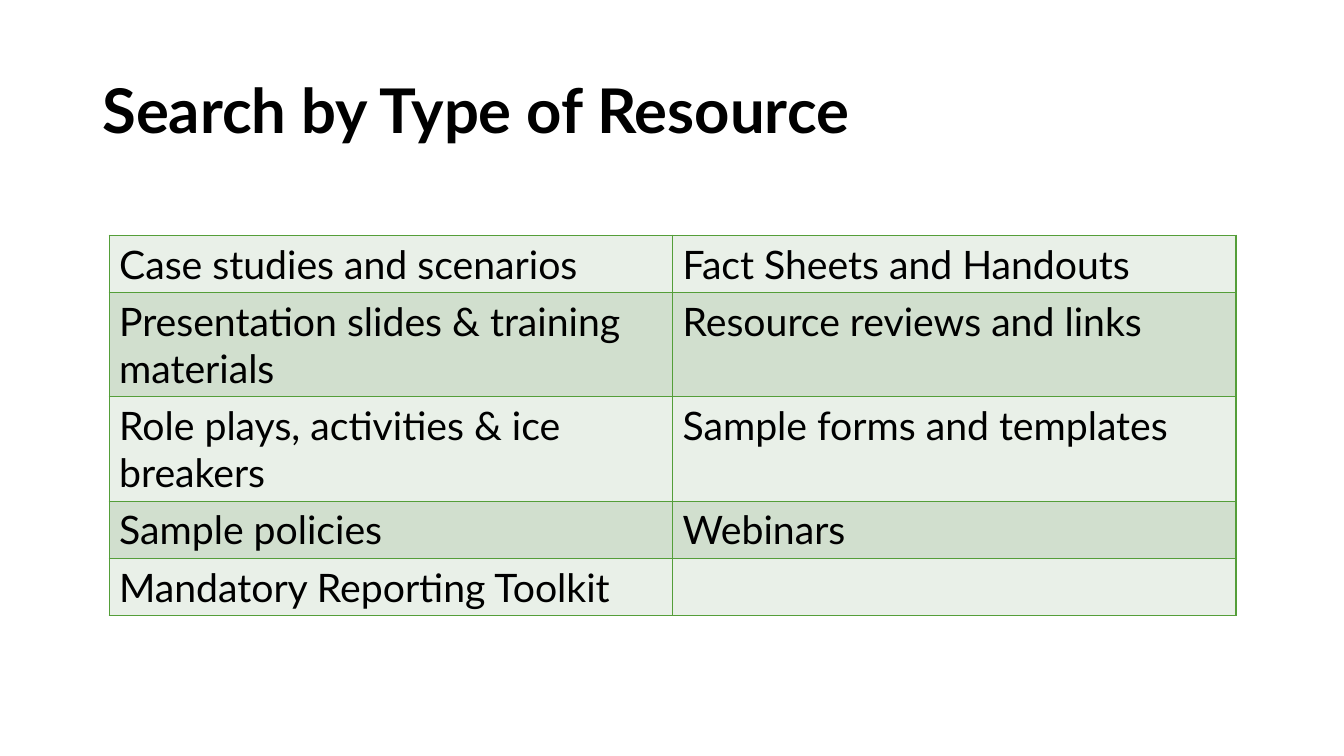
from lxml import etree
from pptx import Presentation
from pptx.dml.color import RGBColor
from pptx.enum.text import MSO_ANCHOR
from pptx.oxml.ns import qn
from pptx.util import Cm, Pt

MIDDLE = MSO_ANCHOR.MIDDLE
FONT = "Lato"
BLACK = "000000"
BORDER = "549E39"
BANDS = ["E9F0E8", "D1DFCE"]
SINGLE_LINE, DOUBLE_LINE = 1.44, 2.63  # row heights in cm

RESOURCES = [
    (SINGLE_LINE, "Case studies and scenarios", "Fact Sheets and Handouts"),
    (DOUBLE_LINE, "Presentation slides & training materials", "Resource reviews and links"),
    (DOUBLE_LINE, "Role plays, activities & ice breakers", "Sample forms and templates"),
    (SINGLE_LINE, "Sample policies", "Webinars"),
    (SINGLE_LINE, "Mandatory Reporting Toolkit", ""),
]


def color(hex_string):
    return RGBColor.from_string(hex_string)


def style_text(paragraph, size, bold=False):
    font = paragraph.font
    font.name = FONT
    font.size = Pt(size)
    font.bold = bold
    font.color.rgb = color(BLACK)


prs = Presentation()
prs.slide_width, prs.slide_height = Cm(33.87), Cm(19.05)
slide = prs.slides.add_slide(prs.slide_layouts[6])

heading = slide.shapes.add_textbox(Cm(2.33), Cm(1.01), Cm(29.21), Cm(3.68)).text_frame
heading.word_wrap = True
heading.vertical_anchor = MIDDLE
heading.text = "Search by Type of Resource"
heading.paragraphs[0].line_spacing = 0.9
style_text(heading.paragraphs[0], 44, bold=True)

table_height = sum(height for height, *_ in RESOURCES)
table = slide.shapes.add_table(
    len(RESOURCES), 2, Cm(2.75), Cm(5.93), Cm(28.4), Cm(table_height)
).table
table.first_row = False

for row_index, (height, *entries) in enumerate(RESOURCES):
    table.rows[row_index].height = Cm(height)
    for column_index, entry in enumerate(entries):
        cell = table.cell(row_index, column_index)
        cell.text = entry
        style_text(cell.text_frame.paragraphs[0], 28)
        cell.fill.solid()
        cell.fill.fore_color.rgb = color(BANDS[row_index % 2])
        # Borders must come before the fill in the cell properties
        cell_properties = cell._tc.get_or_add_tcPr()
        for position, side in enumerate(["a:lnL", "a:lnR", "a:lnT", "a:lnB"]):
            line = etree.Element(qn(side), w=str(Pt(1)))
            line_fill = etree.SubElement(line, qn("a:solidFill"))
            etree.SubElement(line_fill, qn("a:srgbClr"), val=BORDER)
            cell_properties.insert(position, line)

prs.save("out.pptx")
